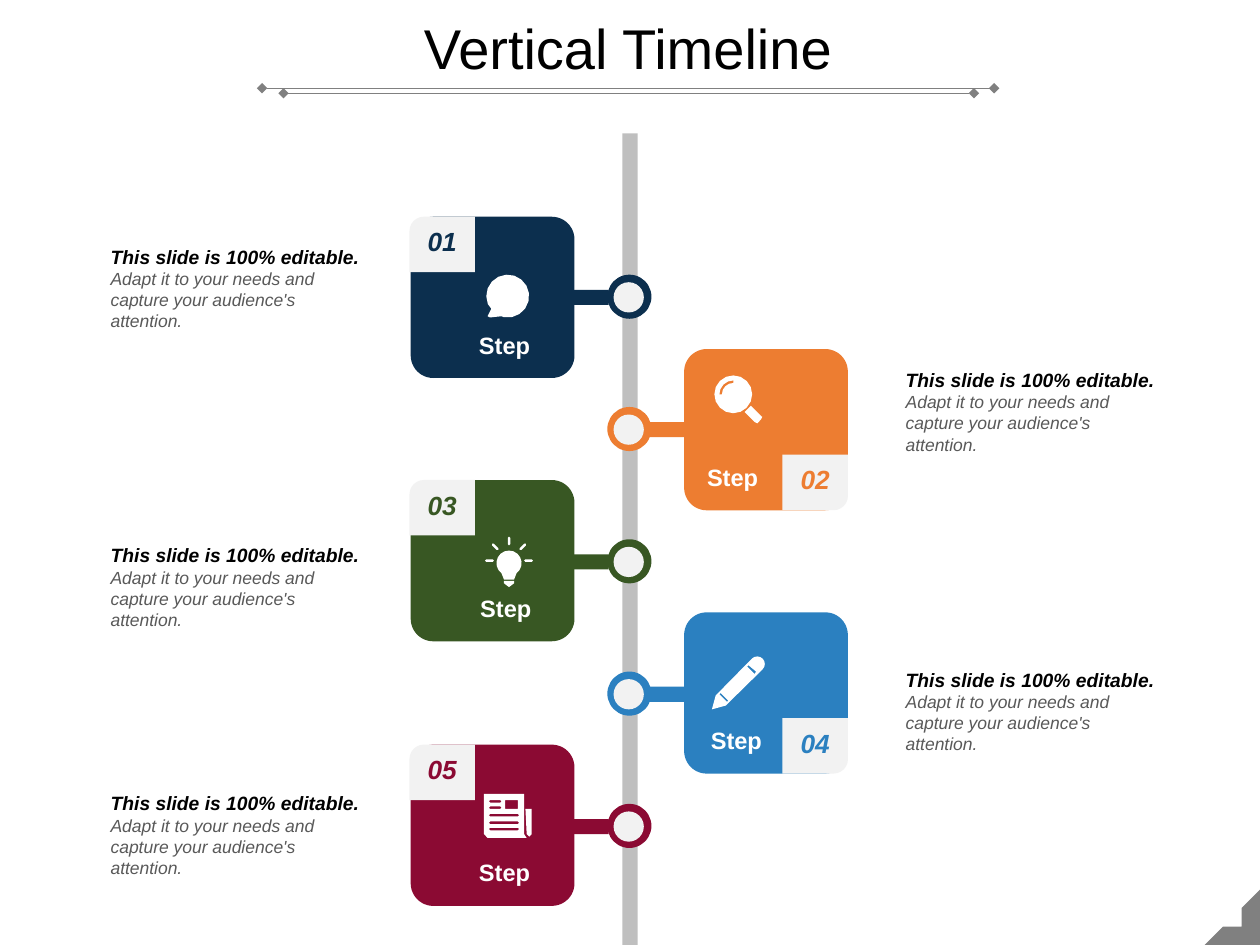
"""Build a vertical timeline slide with five alternating step cards."""
from math import ceil, cos, radians, sin

from lxml import etree
from pptx import Presentation
from pptx.dml.color import RGBColor
from pptx.enum.shapes import MSO_CONNECTOR, MSO_SHAPE
from pptx.enum.text import MSO_ANCHOR, PP_ALIGN
from pptx.oxml.ns import qn
from pptx.util import Pt

PX = 9144
FINE = 100
RECT, OVAL = MSO_SHAPE.RECTANGLE, MSO_SHAPE.OVAL
CARD, BADGE = MSO_SHAPE.ROUNDED_RECTANGLE, MSO_SHAPE.ROUND_1_RECTANGLE
CORNER = MSO_SHAPE.HALF_FRAME
STRAIGHT = MSO_CONNECTOR.STRAIGHT
MIDDLE, LEFT, CENTER = MSO_ANCHOR.MIDDLE, PP_ALIGN.LEFT, PP_ALIGN.CENTER

COLORS = {
    "black": "000000", "white": "FFFFFF", "body": "595959", "rule": "808080",
    "bar": "BFBFBF", "light": "F2F2F2", "navy": "0C2F4E", "orange": "ED7D31",
    "green": "385723", "blue": "2B80C0", "wine": "8B0A33",
}

prs = Presentation()
prs.slide_width, prs.slide_height = 1000 * PX, 750 * PX
s = prs.slides.add_slide(prs.slide_layouts[6])


def add_shape(kind, x, y, w, h, color, adj=None, flip=None):
    sp = s.shapes.add_shape(kind, x * PX, y * PX, w * PX, h * PX)
    sp.shadow.inherit = False
    sp.fill.solid()
    sp.fill.fore_color.rgb = RGBColor.from_string(COLORS[color])
    sp.line.fill.background()
    if adj is not None:
        sp.adjustments[0] = adj
    if flip:
        sp.element.spPr.xfrm.set(flip, "1")
    return sp


def add_text(x, y, w, h, runs, align=CENTER, bold=False, italic=False, wrap=False):
    tf = s.shapes.add_textbox(x * PX, y * PX, w * PX, h * PX).text_frame
    tf.word_wrap = wrap
    tf.vertical_anchor = MIDDLE
    p = tf.paragraphs[0]
    p.alignment = align
    p.font.name, p.font.bold, p.font.italic = "Arial", bold, italic
    for text, size, color in runs:
        r = p.add_run()
        r.text = text
        r.font.size = Pt(size)
        r.font.color.rgb = RGBColor.from_string(COLORS[color])
    return p


add_shape(CORNER, 956, 706, 44, 44, "rule").rotation = 180

for x1, x2, y in ((208, 789, 70), (225, 773, 74)):
    line = s.shapes.add_connector(STRAIGHT, x1 * PX, y * PX, x2 * PX, y * PX)
    line.line.color.rgb = RGBColor.from_string(COLORS["rule"])
    line.line.width = Pt(0.25)
    ln = line.line._get_or_add_ln()
    for end in ("a:headEnd", "a:tailEnd"):
        etree.SubElement(ln, qn(end), type="diamond")
    etree.SubElement(line.element.spPr, qn("a:effectLst"))

title = add_text(0, 14, 997, 53, [("Vertical Timeline", 32, "black")], wrap=True)
title.line_spacing = 0.9

add_shape(RECT, 494, 106, 12, 644, "bar")

steps = [("navy", 370, 189), ("orange", 551, 287), ("green", 371, 426),
         ("blue", 554, 525), ("wine", 370, 623)]
for i, (color, step_x, note_y) in enumerate(steps):
    y = 172 + (419 * i + 1) // 4
    dot_y = 218 + 105 * i
    on_left = i % 2 == 0
    card_x, arm_x, badge_x, note_x = (326, 455, 325, 78) if on_left else (543, 515, 621, 709)
    badge_y = y if on_left else y + 84
    add_shape(OVAL, 482, dot_y, 35, 35, color)
    add_shape(OVAL, 487, dot_y + 6, 24, 24, "light")
    add_shape(RECT, arm_x, dot_y + 12, 28, 12, color)
    add_shape(CARD, card_x, y, 130, 128, color, 0.14)
    add_shape(BADGE, badge_x, badge_y, 52, 44, "light", 0.26, "flipH" if on_left else "flipV")
    add_text(badge_x + 4, badge_y + 2, 44, 35, [(f"{i + 1:02d}", 15, color)], bold=True, italic=True)
    add_text(step_x, y + 85, 66, 33, [("Step ", 13.5, "white")], bold=True)
    note = add_text(note_x, note_y, 224, 79, [
        ("This slide is 100% editable. ", 11, "black"),
        ("Adapt it to your needs and capture your audience's attention.", 10, "body"),
    ], LEFT, italic=True, wrap=True)
    note.runs[0].font.bold = True

rays = [[(404 + 13 * cos(radians(a)), 445 + 13 * sin(radians(a)), 1, 1, a + 90, a + 270),
         (404 + 18 * cos(radians(a)), 445 + 18 * sin(radians(a)), 1, 1, a - 90, a + 90)]
        for a in range(180, 361, 45)]
text_rows = [[(389, y, 1, 1, 90, 270), (x, y, 1, 1, -90, 90)]
             for x, y in ((397, 636), (397, 641), (411, 647), (411, 653), (411, 658))]

icons = [
    [[(403, 235, 17, 17, 158, 460), (398, 251), (389, 252), (387, 251), (390, 245)]],
    [[(582, 313, 15, 15, 0, 337.5)],
     [(582, 313, 11, 11, 180, 270), (582, 313, 9, 9, 270, 180)]],
    [[(604, 330), (596, 322), (591, 327), (599, 335), (601, 336), (604, 333), (605, 331)]],
    [[(404, 447, 10, 10, 145, 395), (410, 455), (408, 460), (400, 460), (398, 455)],
     [(400, 461), (404, 463, 4, 3, 0, 180)], *rays],
    [[(576, 560), (601, 527, 6, 6, 45, -135), (568, 552), (565, 563)],
     [(600, 533), (599, 535), (593, 529), (594, 528)],
     [(578, 556), (577, 557), (571, 551), (572, 550)]],
    [[(384, 630), (416, 630), (416, 662), (418, 665), (387, 662, 3, 3, 90, 180)],
     [(401, 635), (411, 635), (411, 642), (401, 642)],
     [(417, 642), (422, 642), (420, 662, 2, 2, 0, 180)], *text_rows],
]
icons[3][1].insert(1, (408, 461))
for contours in icons:
    builder = None
    for contour in contours:
        points = []
        for part in contour:
            if len(part) == 2:
                points.append(part)
                continue
            cx, cy, rx, ry, start, end = part
            n = ceil(abs(end - start) / (22.5 if rx > 4 else 90))
            angles = [radians(start + (end - start) * k / n) for k in range(n + 1)]
            points += [(cx + rx * cos(a), cy + ry * sin(a)) for a in angles]
        points = [(round(x * FINE), round(y * FINE)) for x, y in points]
        if builder is None:
            builder = s.shapes.build_freeform(*points[0], scale=PX / FINE)
        else:
            builder.move_to(*points[0])
        builder.add_line_segments(points[1:], close=True)
    sp = builder.convert_to_shape()
    sp.shadow.inherit = False
    sp.fill.solid()
    sp.fill.fore_color.rgb = RGBColor.from_string(COLORS["white"])
    sp.line.fill.background()

prs.save("out.pptx")
